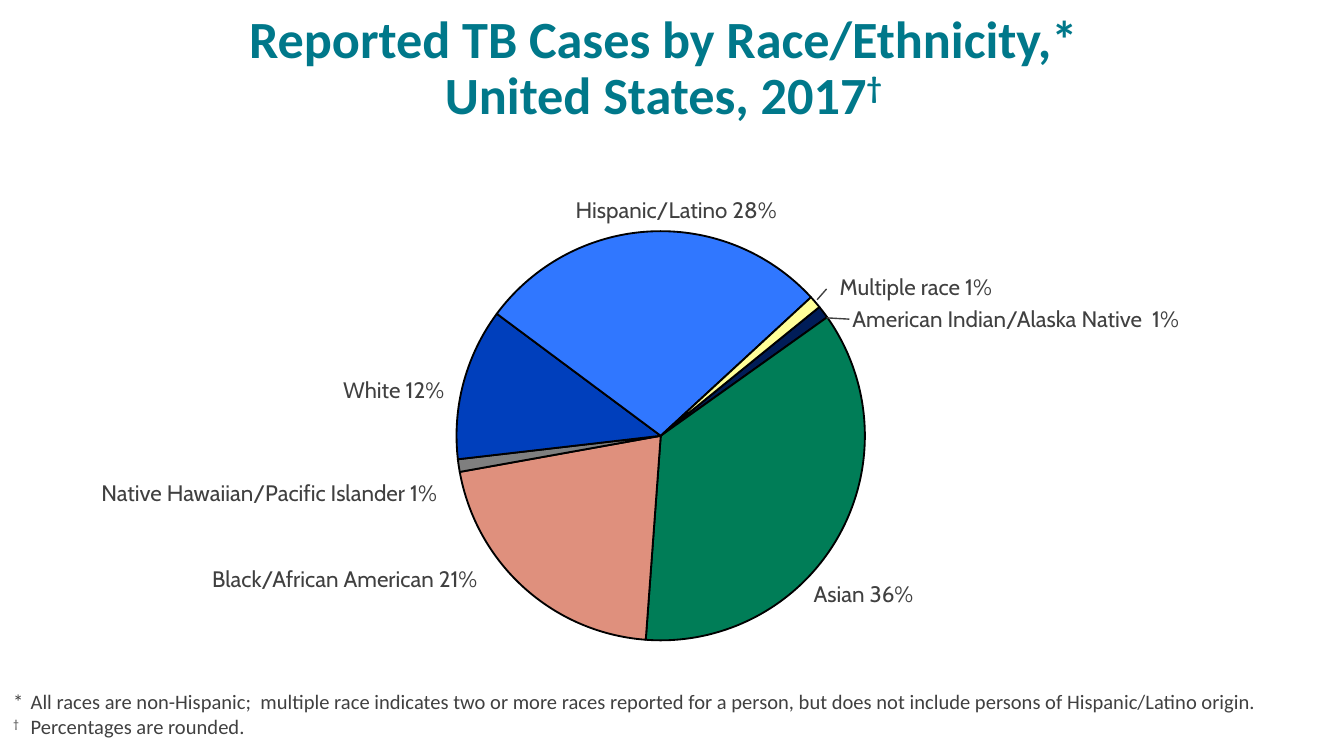
from lxml import etree
from pptx import Presentation
from pptx.chart.data import CategoryChartData
from pptx.dml.color import RGBColor
from pptx.enum.chart import XL_CHART_TYPE
from pptx.enum.shapes import MSO_CONNECTOR
from pptx.enum.text import MSO_ANCHOR, PP_ALIGN
from pptx.oxml.ns import qn
from pptx.util import Pt

PX = 4572  # 200 px to the inch

TEAL = RGBColor(0x00, 0x78, 0x8A)
GREY = RGBColor(0x40, 0x40, 0x40)
BLUE = RGBColor(0x0F, 0x56, 0xDC)
BLACK = RGBColor(0, 0, 0)

# Content: a run is (text, superscript)
TITLE = [("Reported TB Cases by Race/Ethnicity,*\vUnited States, 2017", False),
         ("†", True)]
SLICES = [  # value, colour
    (1, RGBColor(0x00, 0x1D, 0x58)),
    (36, RGBColor(0x00, 0x7D, 0x57)),
    (21, RGBColor(0xDF, 0x90, 0x7D)),
    (1, RGBColor(0x7F, 0x7F, 0x7F)),
    (12, RGBColor(0x00, 0x3F, 0xBC)),
    (28, RGBColor(0x30, 0x77, 0xFF)),
    (1, RGBColor(0xFF, 0xFF, 0x99)),
    (0, RGBColor(0x00, 0x4B, 0x34)),
]
START_ANGLE = 51
PLOT = {"x": 0, "y": 0, "w": 0.92, "h": 0.86}
LABELS = [  # text, left, top, width
    ("Hispanic/Latino 28%", 837, 282, 354),
    ("Native Hawaiian/Pacific Islander 1%", 131, 703, 582),
    ("American Indian/Alaska Native  1%", 1249, 444, 592),
    ("Black/African American 21%", 296, 831, 510),
    ("Asian 36%", 1191, 854, 266),
    ("Multiple race 1%", 1230, 397, 300),
    ("White 12%", 491, 550, 266),
]
LEADERS = [(1216, 446, 1230, 430), (1230, 473, 1264, 475)]
FOOTNOTES = [
    [("* \tAll races are non-Hispanic;  multiple race indicates two or more races "
      "reported for a person, but does not include persons of Hispanic/Latino origin.",
      False)],
    [("† \t", True), ("Percentages are rounded.", False)],
]
HANGING = 26


def px(*lengths):
    return [n * PX for n in lengths]


def add_text(s, box, paragraphs, font, size, color, bold=False):
    tf = s.shapes.add_textbox(*px(*box)).text_frame
    tf.word_wrap = True
    for i, runs in enumerate(paragraphs):
        p = tf.add_paragraph() if i else tf.paragraphs[0]
        for text, raised in runs:
            for j, line in enumerate(text.split("\v")):
                if j:
                    p.add_line_break()
                r = p.add_run()
                r.text = line
                r.font.name, r.font.size, r.font.bold = font, Pt(size), bold
                r.font.color.rgb = color
                if raised:
                    r.font._element.set("baseline", "30000")
    return tf


def add_pie(s):
    data = CategoryChartData()
    data.categories = [str(i + 1) for i in range(len(SLICES))]
    data.add_series("Series 1", [value for value, _ in SLICES])
    chart = s.shapes.add_chart(XL_CHART_TYPE.PIE, *px(678, 333, 662, 734), data).chart
    chart.has_title = chart.has_legend = False
    chart.font.name, chart.font.size = "Cabin", Pt(10)
    chart.font.color.rgb = BLUE
    plot = chart.plots[0]
    plot.vary_by_categories = True
    for i, (_, color) in enumerate(SLICES):
        fmt = plot.series[0].points[i].format
        fmt.fill.solid()
        fmt.fill.fore_color.rgb = color
        fmt.line.color.rgb = BLACK
        fmt.line.width = Pt(1)

    # Rotation of the first slice
    pie = chart._chartSpace.find(".//" + qn("c:pieChart"))
    angle = pie.find(qn("c:firstSliceAng"))
    if angle is None:
        angle = etree.SubElement(pie, qn("c:firstSliceAng"))
    angle.set("val", str(START_ANGLE))

    # Fixed plot area
    area = pie.getparent()
    for old in area.findall(qn("c:layout")):
        area.remove(old)
    layout = etree.Element(qn("c:layout"))
    area.insert(0, layout)
    manual = etree.SubElement(layout, qn("c:manualLayout"))
    settings = {"layoutTarget": "inner", "xMode": "edge", "yMode": "edge", **PLOT}
    for tag, value in settings.items():
        etree.SubElement(manual, qn("c:" + tag)).set("val", str(value))


def main():
    prs = Presentation()
    prs.slide_width, prs.slide_height = px(2000, 1125)
    s = prs.slides.add_slide(prs.slide_layouts[6])

    # Title
    tf = add_text(s, (87, 8, 1800, 188), [TITLE], "Calibri", 28, TEAL, bold=True)
    tf.vertical_anchor = MSO_ANCHOR.BOTTOM
    tf.paragraphs[0].alignment = PP_ALIGN.CENTER
    tf.paragraphs[0].line_spacing = Pt(30)

    # Pie with its labels
    add_pie(s)
    for text, left, top, width in LABELS:
        add_text(s, (left, top, width, 60), [[(text, False)]], "Cabin", 12, GREY)

    # Leader lines
    for ends in LEADERS:
        line = s.shapes.add_connector(MSO_CONNECTOR.STRAIGHT, *px(*ends))
        line.line.color.rgb = GREY
        line.line.width = Pt(0.75)
        etree.SubElement(line._element.spPr, qn("a:effectLst"))

    # Footnotes with a hanging indent
    tf = add_text(s, (0, 1016, 2000, 164), FOOTNOTES, "Calibri", 11, GREY)
    for p in tf.paragraphs:
        pPr = p._p.get_or_add_pPr()
        pPr.set("marL", str(HANGING * PX))
        pPr.set("indent", str(-HANGING * PX))

    prs.save("out.pptx")


if __name__ == "__main__":
    main()
